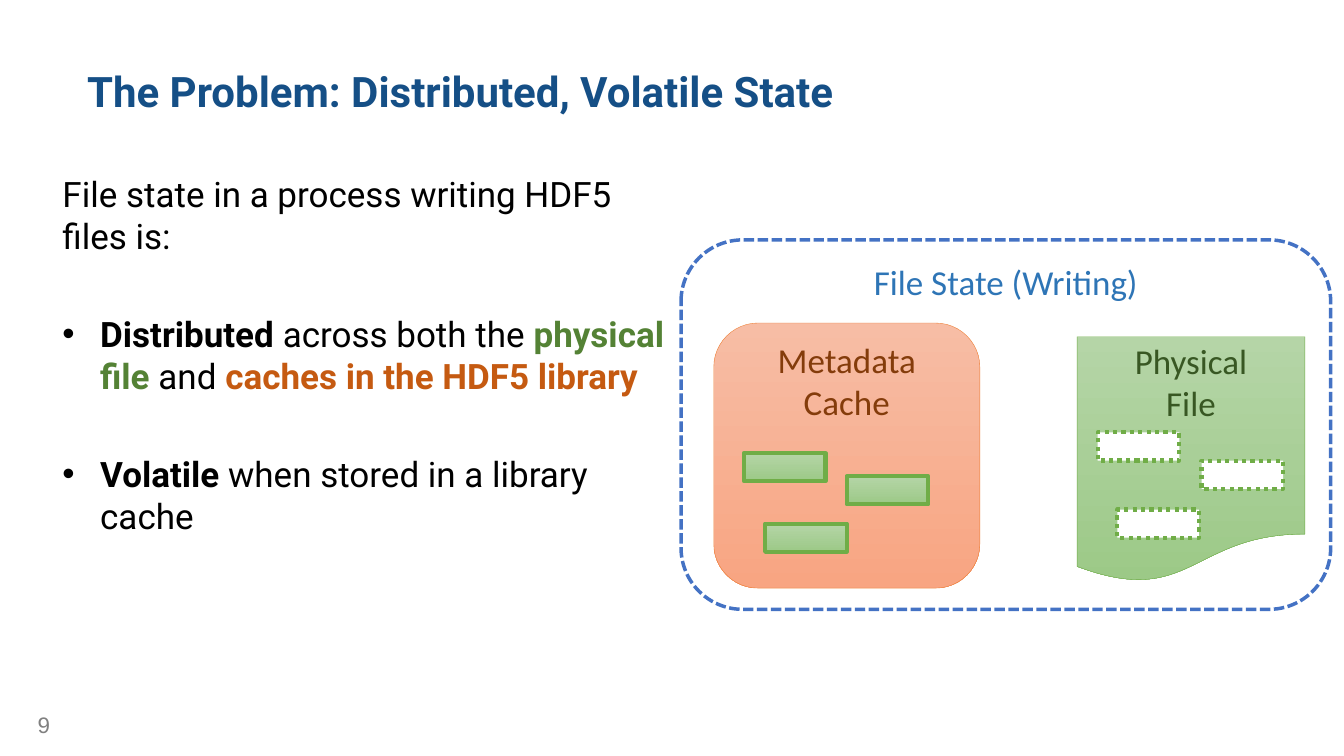
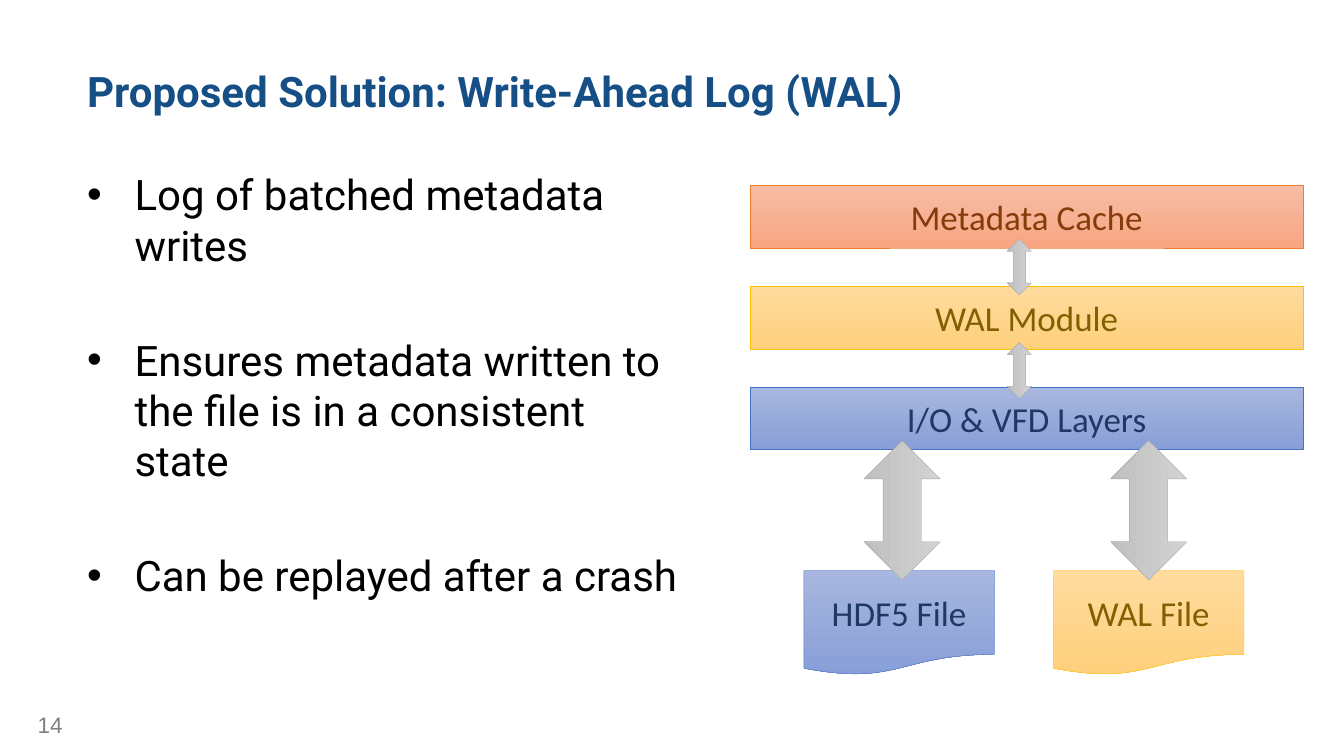
from dataclasses import dataclass

from lxml import etree
from pptx import Presentation
from pptx import util as u
from pptx.dml import color
from pptx.enum import dml, shapes, text
from pptx.oxml import ns

KIND = shapes.MSO_SHAPE
ANCHOR = text.MSO_ANCHOR
DASH = dml.MSO_LINE


@dataclass(frozen=True)
class Tone:
    """Gradient from top to bottom, with matching outline and text colour."""
    top: str
    bottom: str
    line: str
    ink: str = "000000"


@dataclass(frozen=True)
class Theme:
    orange = Tone("F7BDA5", "F8A582", "ED7D31", "843C0B")
    green = Tone("B5D5A7", "9CC987", "70AD47", "385723")
    yellow = Tone("FFDB9E", "FFD07C", "FFC000", "806000")
    blue = Tone("A8B7DF", "889ED7", "4472C4", "203864")
    grey = Tone("D2D2D2", "C0C0C0", "A5A5A5")
    title = "154F86"
    body = "000000"
    number = "808080"
    frame_label = "2E75B6"
    file_word = "548235"
    cache_word = "C55A11"
    white = "FFFFFF"
    title_size = 60
    text_size = 50
    number_size = 32
    text_font = "Roboto"
    label_font = "Calibri"
    number_font = "Arial"


THEME = Theme()


def rgb(value):
    return color.RGBColor.from_string(value)


class Deck:
    def __init__(self, theme):
        self.theme = theme
        self.presentation = Presentation()
        self.presentation.slide_width = u.Cm(67.73)
        self.presentation.slide_height = u.Cm(38.1)
        self.slide = None

    def new_slide(self, title, number):
        layout = self.presentation.slide_layouts[6]
        self.slide = self.presentation.slides.add_slide(layout)
        theme = self.theme
        frame = self.text_box(1.65, 35.69, 1.9, 1.63)
        frame.word_wrap = False
        self.run(frame.paragraphs[0], str(number), theme.number_size,
                 theme.number, theme.number_font)
        frame = self.text_box(4.24, 3.73, 47.37, 2.03, inset=0.15)
        frame.vertical_anchor = ANCHOR.MIDDLE
        frame.paragraphs[0].line_spacing = 0.9
        self.run(frame.paragraphs[0], title, theme.title_size, theme.title,
                 theme.text_font, bold=True)

    def text_box(self, left, top, width, height, inset=None):
        box = self.slide.shapes.add_textbox(
            u.Cm(left), u.Cm(top), u.Cm(width), u.Cm(height))
        frame = box.text_frame
        frame.word_wrap = True
        if inset is not None:
            frame.margin_left = frame.margin_right = u.Cm(inset)
            frame.margin_top = frame.margin_bottom = u.Cm(inset)
        return frame

    def run(self, paragraph, words, size, ink, font, bold=False):
        run = paragraph.add_run()
        run.text = words
        run.font.size = u.Pt(size)
        run.font.name = font
        run.font.bold = bold
        run.font.color.rgb = rgb(ink)

    def bullet(self, paragraph, indent):
        properties = paragraph._p.get_or_add_pPr()
        properties.set("marL", str(u.Cm(indent)))
        properties.set("indent", str(-u.Cm(indent)))
        etree.SubElement(properties, ns.qn("a:buFont"), typeface="Arial")
        etree.SubElement(properties, ns.qn("a:buChar"), char="•")

    def body(self, place, size, indent, bullets, lead=None):
        """Each paragraph is a list of (words, colour, bold) runs."""
        frame = self.text_box(*place, inset=0.15)
        paragraphs = ([lead] if lead else []) + bullets
        for index, runs in enumerate(paragraphs):
            paragraph = frame.add_paragraph() if index else frame.paragraphs[0]
            if runs is not lead:
                self.bullet(paragraph, indent)
            if index:
                paragraph.space_before = u.Pt(20 + 1.2 * size)
            for words, ink, bold in runs:
                self.run(paragraph, words, size, ink, self.theme.text_font, bold)

    def shape(self, kind, left, top, width, height, line, weight=0.5, dash=None):
        shape = self.slide.shapes.add_shape(
            kind, u.Cm(left), u.Cm(top), u.Cm(width), u.Cm(height))
        shape.shadow.inherit = False
        shape.fill.background()
        shape.line.color.rgb = rgb(line)
        shape.line.width = u.Pt(weight)
        if dash:
            shape.line.dash_style = dash
        return shape

    def toned(self, kind, tone, *place, weight=0.5):
        shape = self.shape(kind, *place, tone.line, weight)
        shape.fill.gradient()
        shape.fill.gradient_angle = 270
        for stop, value in zip(shape.fill.gradient_stops, (tone.top, tone.bottom)):
            stop.color.rgb = rgb(value)
        return shape

    def label(self, shape, lines, ink, anchor=ANCHOR.MIDDLE):
        frame = shape.text_frame
        frame.vertical_anchor = anchor
        for index, words in enumerate(lines):
            paragraph = frame.add_paragraph() if index else frame.paragraphs[0]
            paragraph.alignment = text.PP_ALIGN.CENTER
            self.run(paragraph, words, self.theme.text_size, ink,
                     self.theme.label_font)

    def block(self, kind, tone, place, *lines, anchor=ANCHOR.MIDDLE):
        self.label(self.toned(kind, tone, *place), lines, tone.ink, anchor)

    def vertical_arrow(self, *place):
        arrow = self.toned(KIND.LEFT_RIGHT_ARROW, self.theme.grey, *place)
        arrow.rotation = 90


def problem_slide(deck):
    theme = deck.theme
    deck.new_slide("The Problem: Distributed, Volatile State", 9)
    deck.block(KIND.ROUNDED_RECTANGLE, theme.orange, (35.97, 16.28, 13.41, 13.36),
               "Metadata", "Cache", anchor=ANCHOR.TOP)
    deck.block(KIND.FLOWCHART_DOCUMENT, theme.green, (54.28, 16.97, 11.48, 12.4),
               "Physical", "File", anchor=ANCHOR.TOP)
    deck.body(
        (3, 8.53, 30.68, 13.97), theme.text_size, 1.9,
        lead=[("File state in a process writing HDF5 files is:", theme.body, False)],
        bullets=[
            [("Distributed ", theme.body, True),
             ("across both the ", theme.body, False),
             ("physical file ", theme.file_word, True),
             ("and ", theme.body, False),
             ("caches in the HDF5 library", theme.cache_word, True)],
            [("Volatile", theme.body, True),
             (" when stored in a library cache", theme.body, False)],
        ])
    entry_size = (4.11, 1.42)
    for left, top in ((55.32, 21.79), (60.55, 23.22), (56.31, 25.68)):
        slot = deck.shape(KIND.RECTANGLE, left, top, *entry_size,
                          theme.green.line, 6, DASH.ROUND_DOT)
        slot.fill.solid()
        slot.fill.fore_color.rgb = rgb(theme.white)
    for left, top in ((38.56, 26.39), (42.67, 24), (37.49, 22.83)):
        deck.toned(KIND.RECTANGLE, theme.green, left, top, *entry_size, weight=6)
    file_state = deck.shape(KIND.ROUNDED_RECTANGLE, 34.32, 12.09, 32.74, 18.62,
                            theme.blue.line, 5, DASH.SQUARE_DOT)
    file_state.line.dash_style = DASH.DASH
    # The system dash has no member in the enumeration.
    file_state.line._ln.find(ns.qn("a:prstDash")).set("val", "sysDash")
    deck.label(file_state, ["File State (Writing)"], theme.frame_label, ANCHOR.TOP)


def solution_slide(deck):
    theme = deck.theme
    deck.new_slide("Proposed Solution: Write-Ahead Log (WAL)", 14)
    points = ("Log of batched metadata writes",
              "Ensures metadata written to the file is in a consistent state",
              "Can be replayed after a crash")
    deck.body((4.24, 8.36, 30.53, 22.68), theme.title_size, 2.39,
              [[(point, theme.body, False)] for point in points])
    layers = (("Metadata Cache", theme.orange), ("WAL Module", theme.yellow),
              ("I/O & VFD Layers", theme.blue))
    for row, (name, tone) in enumerate(layers):
        deck.block(KIND.RECTANGLE, tone, (37.82, 9.35 + 5.08 * row, 27.84, 3.15), name)
    files = (("HDF5 File", theme.blue, 40.51), ("WAL File", theme.yellow, 53.09))
    for name, tone, left in files:
        deck.block(KIND.FLOWCHART_DOCUMENT, tone, (left, 28.75, 9.6, 5.28), name)
    for left in (41.96, 54.38):
        deck.vertical_arrow(left, 23.8, 7.01, 3.84)
    for top in (18.06, 12.85):
        deck.vertical_arrow(49.96, top, 2.82, 1.22)


def main():
    deck = Deck(THEME)
    problem_slide(deck)
    solution_slide(deck)
    deck.presentation.save("out.pptx")


if __name__ == "__main__":
    main()
